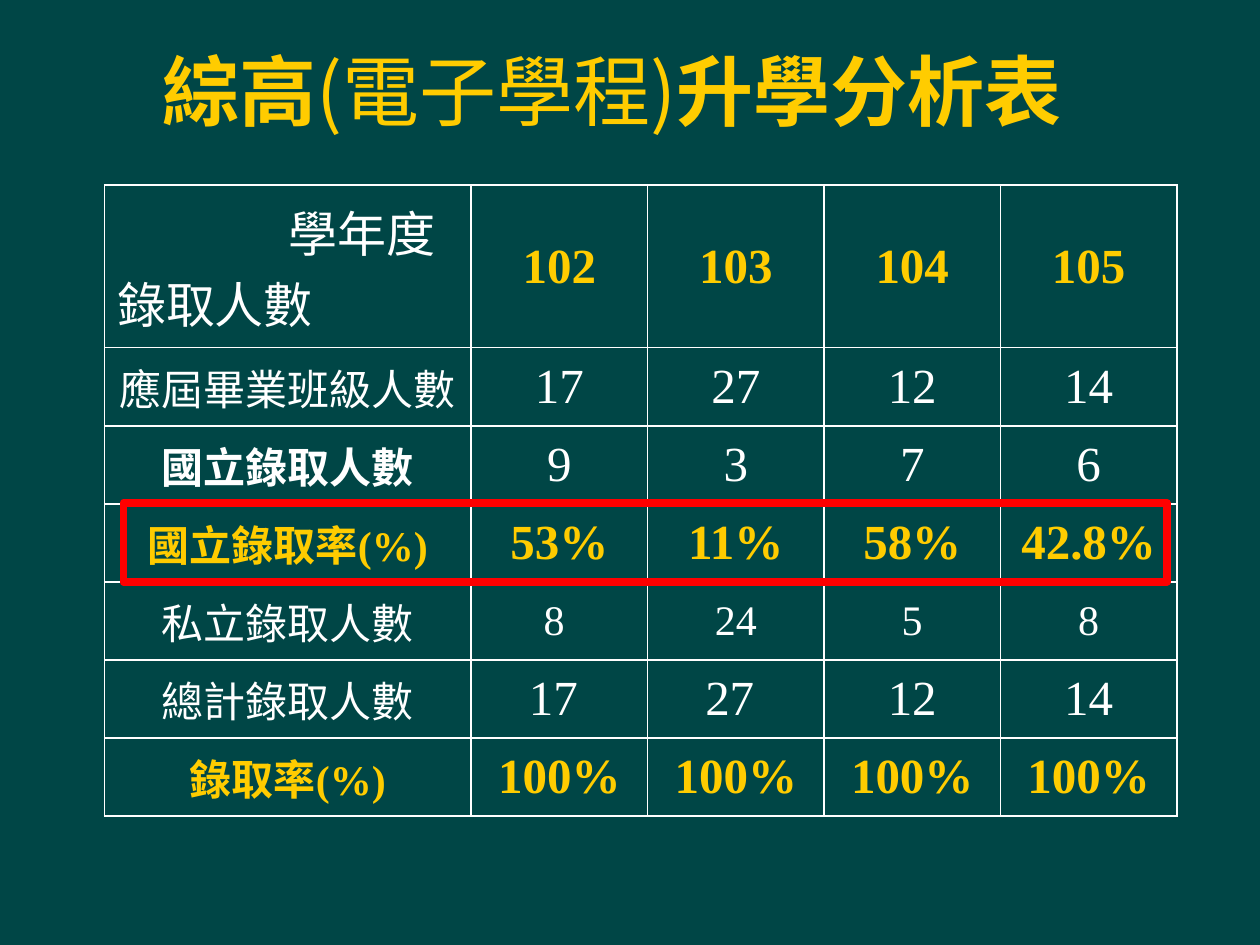
from lxml.etree import SubElement
from pptx import Presentation
from pptx.dml.color import RGBColor
from pptx.enum.shapes import MSO_SHAPE as Shape
from pptx.enum.text import MSO_ANCHOR as Anchor, PP_ALIGN as Align
from pptx.oxml.ns import qn
from pptx.util import Inches, Pt

COLORS = {"background": "004646", "text": "FFFFFF", "accent": "FFCC00", "frame": "FF0000"}
LATIN, CHINESE = "Times New Roman", "Noto Sans CJK SC"

TITLE = [("綜高", True, LATIN), ("(電子學程)", False, CHINESE), ("升學分析表 ", True, LATIN)]
YEARS = ["102", "103", "104", "105"]
# label, values, label is bold, values are bold, colour, value size
ROWS = [
    ("應屆畢業班級人數", ["17", "27", "12", "14"], False, False, "text", 28),
    ("國立錄取人數", ["9", "3", "7", "6"], True, False, "text", 28),
    ("國立錄取率(%)", ["53%", "11%", "58%", "42.8%"], True, True, "accent", 28),
    ("私立錄取人數", ["8 ", "24", "5", "8"], False, False, "text", 24),
    ("總計錄取人數", ["17 ", "27 ", "12", "14"], False, False, "text", 28),
    ("錄取率(%)", ["100%"] * 4, True, True, "accent", 28),
]
LABEL_WIDTH, YEAR_WIDTH = 2.91, 1.4
HEADER_HEIGHT, ROW_HEIGHT = 1.29, 0.62


def rgb(name):
    return RGBColor.from_string(COLORS[name])


def style_run(run, size, color="text", bold=False, latin=LATIN):
    run.font.name = latin
    run.font.size = Pt(size)
    run.font.bold = bold
    run.font.color.rgb = rgb(color)
    SubElement(run.font._element, qn("a:ea"), typeface=CHINESE)


def style_borders(cell):
    properties = cell._tc.get_or_add_tcPr()
    for position, side in enumerate(("a:lnL", "a:lnR", "a:lnT", "a:lnB")):
        line = SubElement(properties, qn(side), w=str(Pt(1)))
        fill = SubElement(line, qn("a:solidFill"))
        SubElement(fill, qn("a:srgbClr"), val=COLORS["text"])
        properties.insert(position, line)


def write_cell(cell, text, size, color="text", bold=False):
    cell.text_frame.text = text
    for paragraph in cell.text_frame.paragraphs:
        paragraph.alignment = Align.CENTER
        style_run(paragraph.runs[0], size, color, bold)


def add_title(slide, left, top, width, height):
    box = slide.shapes.add_textbox(Inches(left), Inches(top), Inches(width), Inches(height))
    box.text_frame.word_wrap = True
    paragraph = box.text_frame.paragraphs[0]
    paragraph.alignment = Align.CENTER
    for text, bold, latin in TITLE:
        run = paragraph.add_run()
        run.text = text
        style_run(run, 44, "accent", bold, latin)


def add_admission_table(slide, left, top):
    width = LABEL_WIDTH + YEAR_WIDTH * len(YEARS)
    height = HEADER_HEIGHT + ROW_HEIGHT * len(ROWS)
    table = slide.shapes.add_table(
        len(ROWS) + 1, len(YEARS) + 1,
        Inches(left), Inches(top), Inches(width), Inches(height)).table
    table.first_row = table.horz_banding = False
    for index, column in enumerate(table.columns):
        column.width = Inches(YEAR_WIDTH if index else LABEL_WIDTH)
    for index, row in enumerate(table.rows):
        row.height = Inches(ROW_HEIGHT if index else HEADER_HEIGHT)
    for cell in table.iter_cells():
        cell.vertical_anchor = Anchor.MIDDLE
        cell.fill.background()
        style_borders(cell)

    corner = table.cell(0, 0)
    write_cell(corner, "學年度\n錄取人數", 28)
    for paragraph, indent in zip(corner.text_frame.paragraphs, (1.36, 0)):
        paragraph.alignment = Align.LEFT
        paragraph._p.get_or_add_pPr().set("marL", str(Inches(indent)))
    for column, year in enumerate(YEARS, 1):
        write_cell(table.cell(0, column), year, 28, "accent", True)
    for row, (label, values, label_bold, value_bold, color, size) in enumerate(ROWS, 1):
        write_cell(table.cell(row, 0), label, 24, color, label_bold)
        for column, value in enumerate(values, 1):
            write_cell(table.cell(row, column), value, size, color, value_bold)


def add_highlight(slide, left, top, width, height):
    frame = slide.shapes.add_shape(
        Shape.RECTANGLE, Inches(left), Inches(top), Inches(width), Inches(height))
    frame.shadow.inherit = False
    frame.fill.background()
    frame.line.color.rgb = rgb("frame")
    frame.line.width = Pt(4.5)
    # A round join softens the corners of the frame.
    SubElement(frame.line._get_or_add_ln(), qn("a:round"))


def main():
    presentation = Presentation()
    presentation.slide_width, presentation.slide_height = Inches(10), Inches(7.5)
    slide = presentation.slides.add_slide(presentation.slide_layouts[6])
    slide.background.fill.solid()
    slide.background.fill.fore_color.rgb = rgb("background")
    table_left, table_top = 0.83, 1.47
    add_title(slide, 0.43, 0.3, 9, 1.09)
    add_admission_table(slide, table_left, table_top)
    rate_top = table_top + HEADER_HEIGHT + 2 * ROW_HEIGHT
    add_highlight(slide, table_left + 0.15, rate_top - 0.01, 8.28, ROW_HEIGHT + 0.01)
    presentation.save("out.pptx")


if __name__ == "__main__":
    main()
